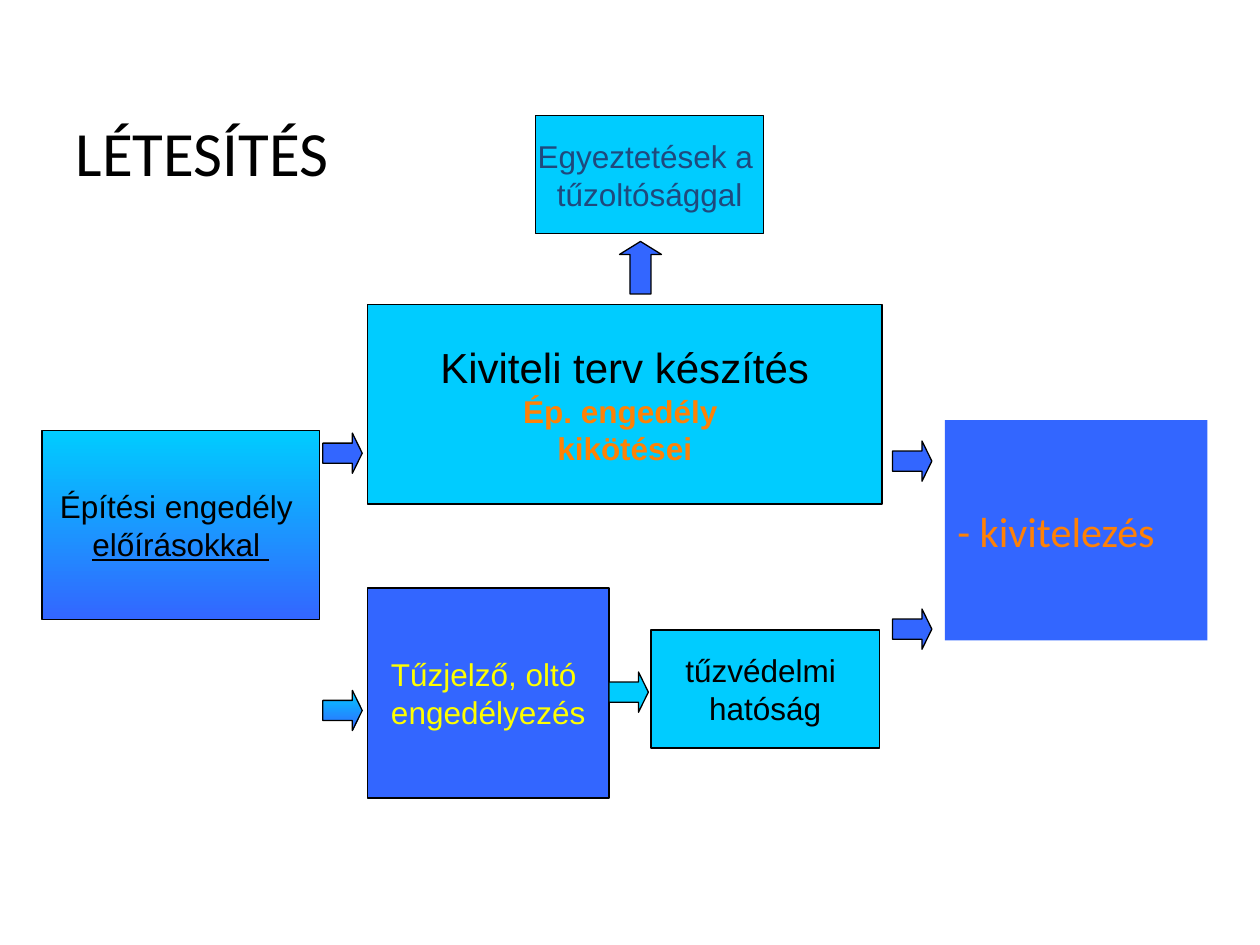
from pptx import Presentation
from pptx.dml.color import RGBColor
from pptx.enum.shapes import MSO_SHAPE
from pptx.enum.text import MSO_ANCHOR, MSO_AUTO_SIZE, PP_ALIGN
from pptx.util import Pt

RECT = MSO_SHAPE.RECTANGLE
RIGHT = MSO_SHAPE.RIGHT_ARROW
UP = MSO_SHAPE.UP_ARROW
LEFT, CENTER = PP_ALIGN.LEFT, PP_ALIGN.CENTER
MIDDLE, BOTTOM = MSO_ANCHOR.MIDDLE, MSO_ANCHOR.BOTTOM
TITLE_ONLY = 5

CYAN, BLUE, BLACK = "00CCFF", "3366FF", "000000"
ORANGE, YELLOW, NAVY = "FF8106", "FFFF00", "1F497D"
GRADIENT = (CYAN, BLUE)


def rgb(value):
    return RGBColor.from_string(value)


class Deck:
    body_font = "Arial"
    head_font = "Calibri"
    line_width = 0.75

    def __init__(self, width, height):
        self.prs = Presentation()
        self.prs.slide_width = Pt(width)
        self.prs.slide_height = Pt(height)
        self.s = None

    def add_slide(self):
        self.s = self.prs.slides.add_slide(self.prs.slide_layouts[TITLE_ONLY])

    def run(self, p, text, size=18, color=BLACK, font=None, bold=False, underline=False):
        r = p.add_run()
        r.text = text
        r.font.name = font or self.body_font
        r.font.size = Pt(size)
        r.font.bold = bold
        r.font.underline = underline
        r.font.color.rgb = rgb(color)

    def title(self, text, x, y, w, h):
        sp = self.s.shapes.title
        sp.left, sp.top, sp.width, sp.height = Pt(x), Pt(y), Pt(w), Pt(h)
        tf = sp.text_frame
        tf.auto_size = MSO_AUTO_SIZE.NONE
        tf.vertical_anchor = BOTTOM
        p = tf.paragraphs[0]
        p.alignment = LEFT
        self.run(p, text, 36, font=self.head_font)

    def shape(self, kind, x, y, w, h, fill, line=True):
        sp = self.s.shapes.add_shape(kind, Pt(x), Pt(y), Pt(w), Pt(h))
        sp.shadow.inherit = False
        if isinstance(fill, tuple):
            sp.fill.gradient()
            sp.fill.gradient_angle = 270
            for stop, color, position in zip(sp.fill.gradient_stops, fill, (0, 1)):
                stop.color.rgb = rgb(color)
                stop.position = position
        else:
            sp.fill.solid()
            sp.fill.fore_color.rgb = rgb(fill)
        if line:
            sp.line.color.rgb = rgb(BLACK)
            sp.line.width = Pt(self.line_width)
        else:
            sp.line.fill.background()
        return sp

    def box(self, x, y, w, h, fill, lines, align=CENTER, line=True, wrap=False):
        tf = self.shape(RECT, x, y, w, h, fill, line).text_frame
        tf.word_wrap = wrap
        tf.vertical_anchor = MIDDLE
        for i, (text, style) in enumerate(lines):
            p = tf.add_paragraph() if i else tf.paragraphs[0]
            p.alignment = align
            self.run(p, text, **style)

    def arrow(self, x, y, fill=BLUE, kind=RIGHT, w=22.5, h=23, head=0.25):
        sp = self.shape(kind, x, y, w, h, fill)
        sp.adjustments[0] = 0.5
        sp.adjustments[1] = head


def main():
    deck = Deck(720, 540)
    deck.add_slide()
    deck.title("LÉTESÍTÉS", 36, 21.6, 217.5, 90)

    condition = {"color": ORANGE, "bold": True}
    deck.box(210, 174, 294, 114, CYAN, [
        ("Kiviteli terv készítés", {"size": 24}),
        ("Ép. engedély ", condition),
        ("kikötései", condition),
    ])
    deck.box(372, 360, 130.5, 67.5, CYAN, [("tűzvédelmi ", {}), ("hatóság", {})])
    deck.box(210, 336, 138, 120, BLUE, [
        ("Tűzjelző, oltó ", {"color": YELLOW}),
        ("engedélyezés", {"color": YELLOW}),
    ])
    deck.box(24, 246, 158.5, 108, GRADIENT, [
        ("Építési engedély ", {}),
        ("előírásokkal ", {"underline": True}),
    ])
    deck.box(540, 240, 150, 126, BLUE, [
        ("- kivitelezés", {"size": 24, "color": ORANGE, "font": deck.head_font}),
    ], align=LEFT, line=False, wrap=True)
    deck.box(306, 66, 130.5, 67.5, CYAN, [
        ("Egyeztetések a ", {"color": NAVY}),
        ("tűzoltósággal", {"color": NAVY}),
    ])

    deck.arrow(348, 384, CYAN)
    deck.arrow(184.5, 394.5, GRADIENT)
    deck.arrow(354, 138, kind=UP, w=24, h=30, head=0.31)
    for x, y in ((184.5, 247.5), (510, 252), (510, 348)):
        deck.arrow(x, y)

    deck.prs.save("out.pptx")


if __name__ == "__main__":
    main()
